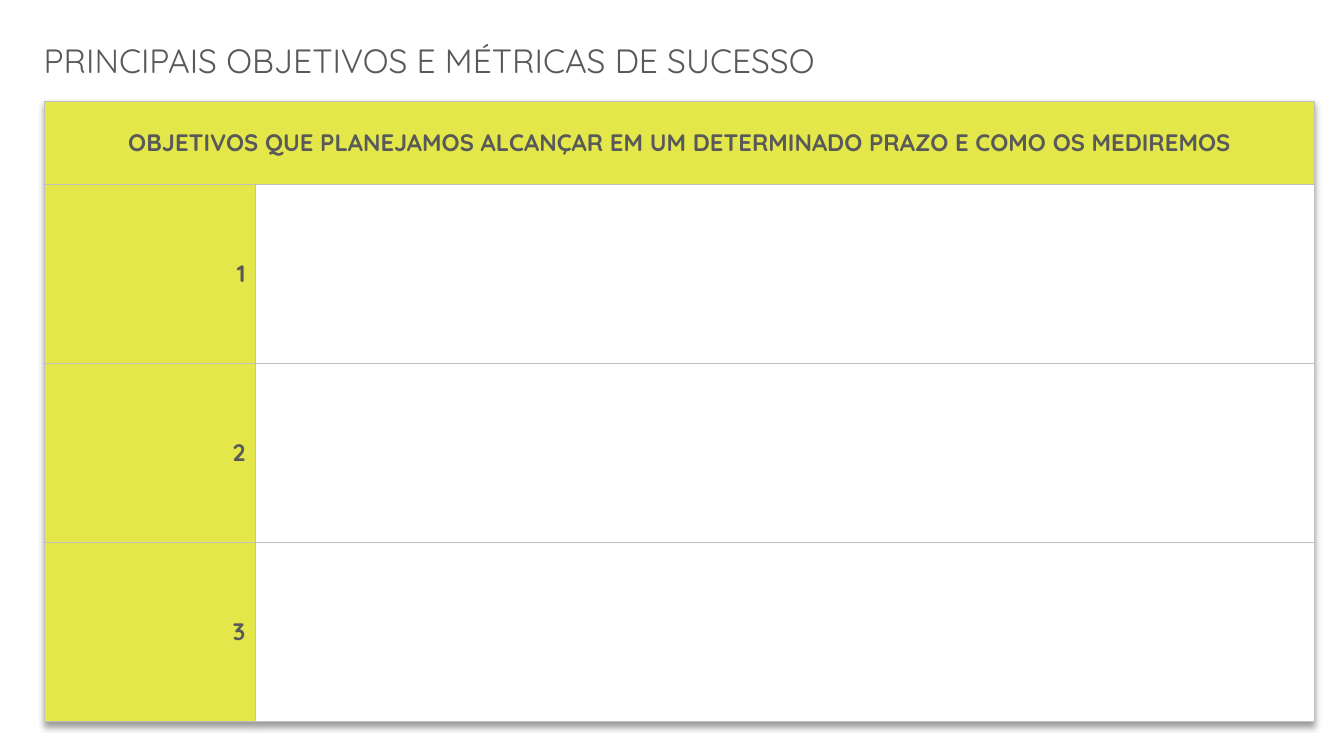
import pptx
import pptx.util
import pptx.oxml
import pptx.oxml.ns
import pptx.dml.color
import pptx.enum.text

Pt = pptx.util.Pt
Align = pptx.enum.text.PP_ALIGN
Anchor = pptx.enum.text.MSO_ANCHOR
HUES = {"text": "595959", "lime": "E3E749", "white": "FFFFFF", "rule": "BFBFBF", "shade": "000000"}
FONT = "Quicksand"
SPACE = pptx.oxml.ns.nsdecls("a")


def color(name):
    return pptx.dml.color.RGBColor.from_string(HUES[name])


def write(frame, text, size, align, bold=False):
    para = frame.paragraphs[0]
    para.alignment = align
    run = para.add_run()
    run.text = text
    run.font.name = FONT
    run.font.size = Pt(size)
    run.font.bold = bold
    run.font.color.rgb = color("text")


def border(cell):
    props = cell._tc.get_or_add_tcPr()
    for side in ("lnL", "lnR", "lnT", "lnB"):
        props.append(pptx.oxml.parse_xml(
            f'<a:{side} {SPACE} w="{int(Pt(1))}"><a:solidFill>'
            f'<a:srgbClr val="{HUES["rule"]}"/></a:solidFill></a:{side}>'))


def shadow(table):
    table._tbl.tblPr.insert(0, pptx.oxml.parse_xml(
        f'<a:effectLst {SPACE}><a:outerShdw blurRad="{int(Pt(4))}" dist="{int(Pt(3))}" '
        f'dir="5400000" algn="t" rotWithShape="0"><a:srgbClr val="{HUES["shade"]}">'
        '<a:alpha val="40000"/></a:srgbClr></a:outerShdw></a:effectLst>'))


def add_title(slide, left, top, width, height):
    title = slide.shapes.title
    title.left, title.top, title.width, title.height = map(Pt, (left, top, width, height))
    frame = title.text_frame
    frame.word_wrap = True
    frame.auto_size = pptx.enum.text.MSO_AUTO_SIZE.NONE
    frame.vertical_anchor = Anchor.TOP
    write(frame, "PRINCIPAIS OBJETIVOS E MÉTRICAS DE SUCESSO", 24, Align.LEFT)


def add_goals(slide, left, top, width, height):
    count, head, side = 3, 59, 150.5
    table = slide.shapes.add_table(count + 1, 2, *map(Pt, (left, top, width, height))).table
    table.first_row = False
    table.horz_banding = False
    shadow(table)
    table.columns[0].width = Pt(side)
    table.columns[1].width = Pt(width - side)
    for index, row in enumerate(table.rows):
        row.height = Pt((height - head) / count if index else head)
        for col, cell in enumerate(row.cells):
            border(cell)
            cell.fill.solid()
            cell.fill.fore_color.rgb = color("white" if index and col else "lime")
            cell.vertical_anchor = Anchor.MIDDLE
        if index:
            write(row.cells[0].text_frame, str(index), 17, Align.RIGHT, True)
    table.cell(0, 0).merge(table.cell(0, 1))
    write(table.cell(0, 0).text_frame,
          "OBJETIVOS QUE PLANEJAMOS ALCANÇAR EM UM DETERMINADO PRAZO E COMO OS MEDIREMOS",
          17, Align.CENTER, True)


def main():
    deck = pptx.Presentation()
    deck.slide_width, deck.slide_height = Pt(960), Pt(540)
    slide = deck.slides.add_slide(deck.slide_layouts[5])
    slide.background.fill.solid()
    slide.background.fill.fore_color.rgb = color("white")
    add_title(slide, 24, 25, 582, 36)
    add_goals(slide, 32, 72.5, 907, 443)
    deck.save("out.pptx")


if __name__ == "__main__":
    main()
